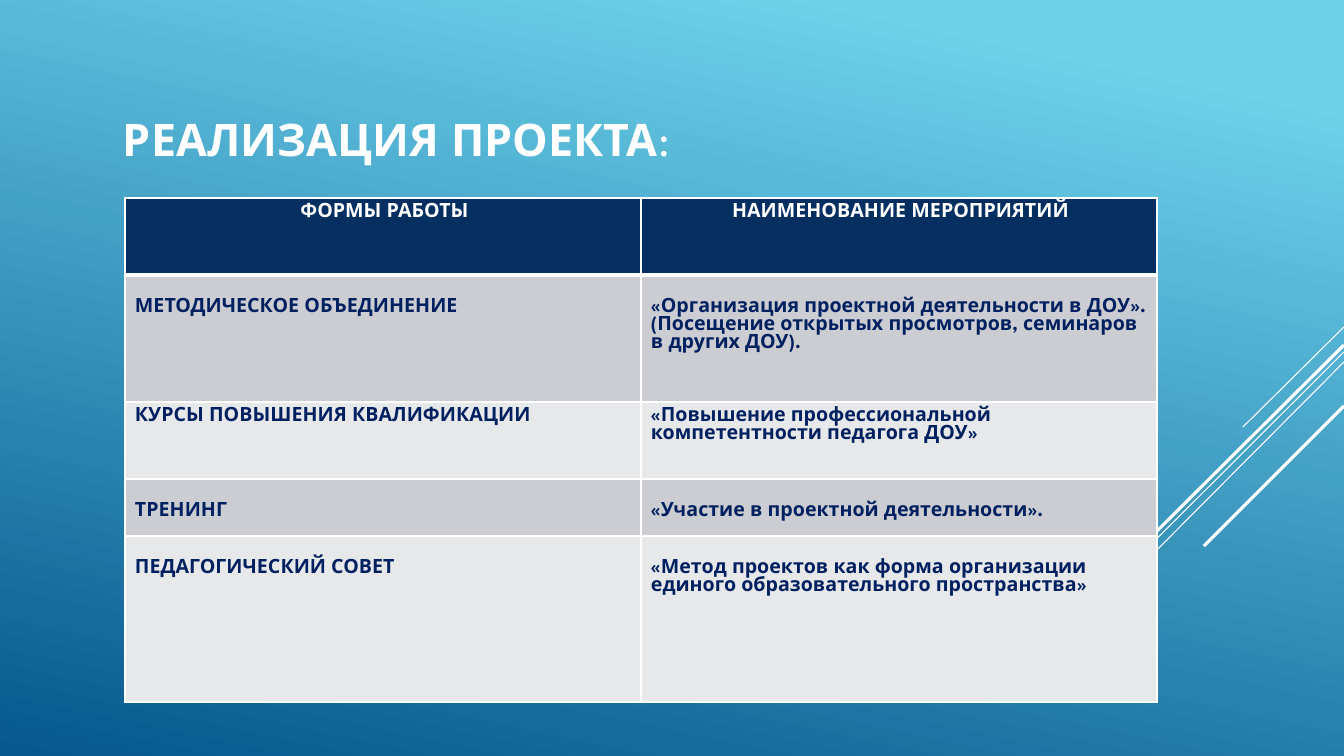
from pptx import Presentation
from pptx.dml.color import RGBColor
from pptx.enum.shapes import MSO_CONNECTOR
from pptx.enum.text import MSO_ANCHOR, MSO_AUTO_SIZE, PP_ALIGN
from pptx.oxml.ns import qn
from pptx.util import Pt
from lxml import etree

STRAIGHT = MSO_CONNECTOR.STRAIGHT
BOTTOM, TOP = MSO_ANCHOR.BOTTOM, MSO_ANCHOR.TOP
NO_AUTOFIT = MSO_AUTO_SIZE.NONE
LEFT, CENTER = PP_ALIGN.LEFT, PP_ALIGN.CENTER
FONT = "League Spartan"
WHITE, NAVY, TEXT = "FFFFFF", "052F61", "002060"
BANDS = ("CCCDD2", "E7E8EA")


def px(length):
    return round(length * 914400 / 100.8)


def paint(color_format, hex_color):
    color_format.rgb = RGBColor.from_string(hex_color)


deck = Presentation()
deck.slide_width, deck.slide_height = px(1344), px(756)
slide = deck.slides.add_slide(deck.slide_layouts[5])

backdrop = slide.background.fill
backdrop.gradient()
backdrop.gradient_angle = 258
for stop, (position, color) in zip(backdrop.gradient_stops, ((0.1, "6ED2EB"), (1, "06588E"))):
    stop.position = position
    paint(stop.color, color)

rays = [
    (327, 1243, 427, 0.75),
    (352, 1015, 680, 0.75),
    (362, 1135, 572, 0.75),
    (345, 1151, 537, 2.25),
    (406, 1204, 546, 2.25),
]
for start_y, end_x, end_y, weight in rays:
    ray = slide.shapes.add_connector(STRAIGHT, px(1344), px(start_y), px(end_x), px(end_y))
    ray.line.width = Pt(weight)
    paint(ray.line.color, WHITE)
    etree.SubElement(ray._element.spPr, qn("a:effectLst"))

heading = slide.shapes.title
heading.left, heading.top, heading.width, heading.height = px(113), px(35), px(828), px(138)
heading_text = heading.text_frame
heading_text.auto_size = NO_AUTOFIT
heading_text.word_wrap = True
heading_text.vertical_anchor = BOTTOM
heading_text.margin_left, heading_text.margin_bottom = px(10), px(7)
heading_line = heading_text.paragraphs[0]
heading_line.alignment = LEFT
heading_line.font.name, heading_line.font.size = FONT, Pt(32)
paint(heading_line.font.color, WHITE)
for words, bold in (("РЕАЛИЗАЦИЯ ПРОЕКТА", True), (":", False)):
    run = heading_line.add_run()
    run.text = words
    run.font.bold = bold

activities = [
    (77, 6, "ФОРМЫ РАБОТЫ", "НАИМЕНОВАНИЕ МЕРОПРИЯТИЙ"),
    (127, 24, "МЕТОДИЧЕСКОЕ ОБЪЕДИНЕНИЕ",
     "«Организация проектной деятельности в ДОУ».\n"
     "(Посещение открытых просмотров, семинаров в других ДОУ)."),
    (77, 6, "КУРСЫ ПОВЫШЕНИЯ КВАЛИФИКАЦИИ",
     "«Повышение профессиональной компетентности педагога ДОУ»"),
    (57, 24, "ТРЕНИНГ", "«Участие в проектной деятельности»."),
    (166, 24, "ПЕДАГОГИЧЕСКИЙ СОВЕТ",
     "«Метод проектов как форма организации единого образовательного пространства»"),
]
table_height = sum(activity[0] for activity in activities)
plan = slide.shapes.add_table(len(activities), 2, px(125), px(198), px(1032), px(table_height)).table
for row, (height, top_margin, *entries) in enumerate(activities):
    plan.rows[row].height = px(height)
    is_header = row == 0
    for column, entry in enumerate(entries):
        cell = plan.cell(row, column)
        cell.margin_left, cell.margin_right = px(10), px(7)
        cell.margin_top, cell.margin_bottom = px(top_margin), 0
        cell.vertical_anchor = TOP
        properties = cell._tc.get_or_add_tcPr()
        for side in ("lnL", "lnR", "lnT", "lnB"):
            thick = (row, side) in ((0, "lnB"), (1, "lnT"))
            border = etree.SubElement(properties, qn(f"a:{side}"), w=str(Pt(3 if thick else 1)))
            border_fill = etree.SubElement(border, qn("a:solidFill"))
            etree.SubElement(border_fill, qn("a:srgbClr"), val=WHITE)
        cell.fill.solid()
        paint(cell.fill.fore_color, NAVY if is_header else BANDS[(row - 1) % 2])
        cell.text = entry
        for paragraph in cell.text_frame.paragraphs:
            paragraph.alignment = CENTER if is_header else LEFT
            paragraph.font.name, paragraph.font.size = FONT, Pt(14)
            paragraph.font.bold = True
            paint(paragraph.font.color, WHITE if is_header else TEXT)

deck.save("out.pptx")
